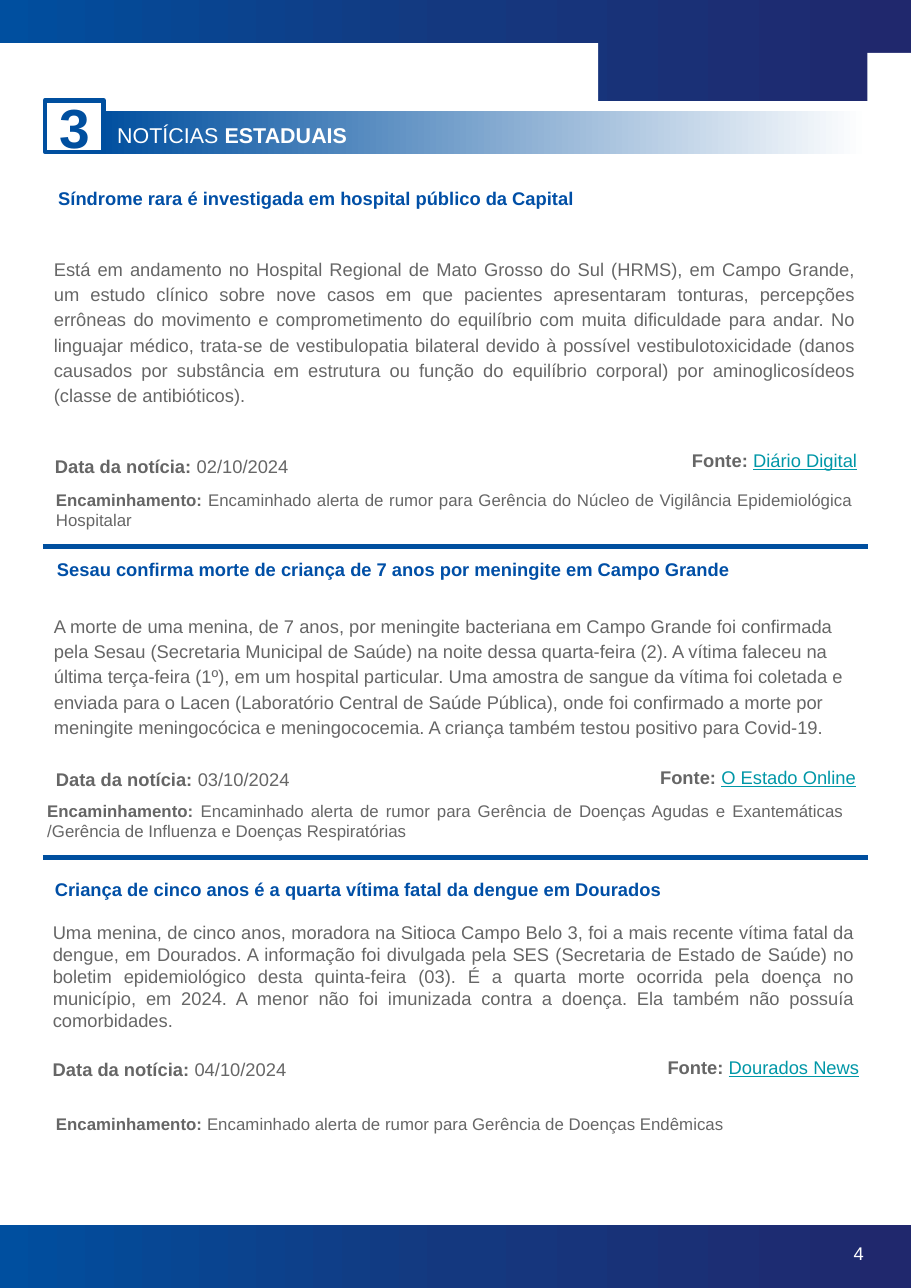
from copy import deepcopy

from lxml import etree
from pptx import Presentation
from pptx.dml.color import RGBColor
from pptx.enum.shapes import MSO_CONNECTOR, MSO_SHAPE
from pptx.enum.text import MSO_ANCHOR, MSO_AUTO_SIZE, PP_ALIGN
from pptx.oxml.ns import qn
from pptx.util import Pt

LEFT, CENTER, RIGHT, JUSTIFY = PP_ALIGN.LEFT, PP_ALIGN.CENTER, PP_ALIGN.RIGHT, PP_ALIGN.JUSTIFY
TOP, MIDDLE = MSO_ANCHOR.TOP, MSO_ANCHOR.MIDDLE
RECTANGLE, STRAIGHT = MSO_SHAPE.RECTANGLE, MSO_CONNECTOR.STRAIGHT

WIDTH, HEIGHT = 595.44, 841.68
INSET = 7.2
FONT = "Arial"
BLUE, HEADING, GREY, TEAL, WHITE = "004F9F", "004FA6", "666666", "0097A7", "FFFFFF"
BAND = [BLUE, "14387F", "20286D"]
BODY_WIDTH, FIELD_WIDTH, SOURCE_WIDTH = 538.6, 535, 255

SECTION_NUMBER, PAGE_NUMBER = "3", "4"
SECTION = [("NOTÍCIAS", False), (" ESTADUAIS", True)]
DATE_LABEL, SOURCE_LABEL, ACTION_LABEL = "Data da notícia: ", "Fonte: ", "Encaminhamento: "

# Places are (left, top); for a source, (right, top).
NEWS = [
    {
        "title": ("Síndrome rara é investigada em hospital público da Capital", (31, 115.2)),
        "body": (
            "Está em andamento no Hospital Regional de Mato Grosso do Sul (HRMS), em Campo Grande, "
            "um estudo clínico sobre nove casos em que pacientes apresentaram tonturas, percepções "
            "errôneas do movimento e comprometimento do equilíbrio com muita dificuldade para andar. "
            "No linguajar médico, trata-se de vestibulopatia bilateral devido à possível "
            "vestibulotoxicidade (danos causados por substância em estrutura ou função do equilíbrio "
            "corporal) por aminoglicosídeos (classe de antibióticos).", (28.1, 159.1)),
        "body_height": 113, "align": JUSTIFY, "spacing": 1.15,
        "date": ("02/10/2024", (28.8, 290.2)),
        "source": ("Diário Digital", (567.4, 286.6)),
        "action": ("Encaminhado alerta de rumor para Gerência do Núcleo de Vigilância "
                   "Epidemiológica Hospitalar", (29.5, 312.5)),
    },
    {
        "title": ("Sesau confirma morte de criança de 7 anos por meningite em Campo Grande",
                  (30.2, 357.8)),
        "body": (
            "A morte de uma menina, de 7 anos, por meningite bacteriana em Campo Grande foi "
            "confirmada pela Sesau (Secretaria Municipal de Saúde) na noite dessa quarta-feira (2). "
            "A vítima faleceu na última terça-feira (1º), em um hospital particular. Uma amostra de "
            "sangue da vítima foi coletada e enviada para o Lacen (Laboratório Central de Saúde "
            "Pública), onde foi confirmado a morte por meningite meningocócica e meningococemia. "
            "A criança também testou positivo para Covid-19.", (28.1, 392.4)),
        "body_height": 95.8, "align": LEFT, "spacing": 1.15,
        "date": ("03/10/2024", (29.5, 494.6)),
        "source": ("O Estado Online", (566.6, 493.2)),
        "action": ("Encaminhado alerta de rumor para Gerência de Doenças Agudas e Exantemáticas "
                   "/Gerência de Influenza e Doenças Respiratórias", (23.8, 516.2)),
    },
    {
        "title": ("Criança de cinco anos é a quarta vítima fatal da dengue em Dourados",
                  (28.8, 566.6)),
        "body": (
            "Uma menina, de cinco anos, moradora na Sitioca Campo Belo 3, foi a mais recente vítima "
            "fatal da dengue, em Dourados. A informação foi divulgada pela SES (Secretaria de Estado "
            "de Saúde) no boletim epidemiológico desta quinta-feira (03). É a quarta morte ocorrida "
            "pela doença no município, em 2024. A menor não foi imunizada contra a doença. Ela também "
            "não possuía comorbidades.", (27.4, 594.7)),
        "body_height": 87.1, "align": JUSTIFY, "spacing": 1,
        "date": ("04/10/2024", (27.4, 684)),
        "source": ("Dourados News", (568.8, 683.3)),
        "action": ("Encaminhado alerta de rumor para Gerência de Doenças Endêmicas", (29.5, 720.7)),
    },
]
DIVIDERS = [357.1, 560.2]


def color(value):
    return RGBColor.from_string(value)


def fill_gradient(shape, colors):
    """Fill from left to right with evenly spaced colours."""
    shape.fill.gradient()
    shape.fill.gradient_angle = 0
    stop_list = shape._element.spPr.find(qn("a:gradFill")).find(qn("a:gsLst"))
    while len(stop_list) < len(colors):
        stop_list.append(deepcopy(stop_list[-1]))
    for index, (stop, value) in enumerate(zip(shape.fill.gradient_stops, colors)):
        stop.position = index / (len(colors) - 1)
        stop.color.rgb = color(value)


def add_rectangle(slide, left, top, width, height, colors):
    shape = slide.shapes.add_shape(RECTANGLE, Pt(left), Pt(top), Pt(width), Pt(height))
    shape.shadow.inherit = False
    shape.line.fill.background()
    if len(colors) > 1:
        fill_gradient(shape, colors)
    else:
        shape.fill.solid()
        shape.fill.fore_color.rgb = color(colors[0])
    return shape


def write(shape, runs, size, align=LEFT, anchor=TOP, spacing=1, left_inset=INSET):
    """Write one paragraph from (text, colour, bold, underline) runs."""
    frame = shape.text_frame
    frame.auto_size = MSO_AUTO_SIZE.NONE
    frame.word_wrap = True
    frame.vertical_anchor = anchor
    frame.margin_left = Pt(left_inset)
    frame.margin_top = frame.margin_right = frame.margin_bottom = Pt(INSET)
    paragraph = frame.paragraphs[0]
    paragraph.alignment = align
    paragraph.line_spacing = spacing
    for text, value, bold, underline in runs:
        run = paragraph.add_run()
        run.text = text
        run.font.name = FONT
        run.font.size = Pt(size)
        run.font.bold = bold
        run.font.underline = underline
        run.font.color.rgb = color(value)


def add_text(slide, left, top, width, height, runs, size=12, **options):
    box = slide.shapes.add_textbox(Pt(left), Pt(top), Pt(width), Pt(height))
    write(box, runs, size, **options)


def add_divider(slide, top):
    line = slide.shapes.add_connector(STRAIGHT, Pt(28.1), Pt(top), Pt(567.2), Pt(top))
    line.line.color.rgb = color(BLUE)
    line.line.width = Pt(3)
    etree.SubElement(line._element.spPr, qn("a:effectLst"))


def add_page_frame(slide):
    add_rectangle(slide, 0, 800.6, WIDTH, HEIGHT - 800.6, BAND)
    add_rectangle(slide, 0, 15.1, WIDTH, 51.1, BAND)
    add_rectangle(slide, 0, 28.1, 391, 41.8, [WHITE])
    add_rectangle(slide, 0, 0, WIDTH, 28.1, BAND)
    add_rectangle(slide, 566.9, 34.6, WIDTH - 566.9, 35.3, [WHITE])
    add_text(slide, 535.7, 787, 36, 64, [(PAGE_NUMBER, WHITE, False, False)],
             align=RIGHT, anchor=MIDDLE)


def add_section_heading(slide):
    title = slide.shapes.title
    title.left, title.top, title.width, title.height = Pt(65.5), Pt(72.7), Pt(501.8), Pt(28.1)
    fill_gradient(title, [BLUE, WHITE])
    write(title, [(text, WHITE, bold, False) for text, bold in SECTION], 14, left_inset=11.1)
    number = add_rectangle(slide, 29.5, 65.5, 38.2, 33.8, [WHITE])
    number.line.color.rgb = color(BLUE)
    number.line.width = Pt(3)
    write(number, [(SECTION_NUMBER, BLUE, True, False)], 36, align=CENTER, anchor=MIDDLE)


def add_news(slide, news):
    text, place = news["title"]
    add_text(slide, *place, FIELD_WIDTH, 28.8, [(text, HEADING, True, False)], align=JUSTIFY)
    text, place = news["body"]
    add_text(slide, *place, BODY_WIDTH, news["body_height"], [(text, GREY, False, False)],
             align=news["align"], spacing=news["spacing"])
    text, place = news["date"]
    add_text(slide, *place, SOURCE_WIDTH, 28.8,
             [(DATE_LABEL, GREY, True, False), (text, GREY, False, False)], align=JUSTIFY)
    text, (right, top) = news["source"]
    add_text(slide, right - SOURCE_WIDTH, top, SOURCE_WIDTH, 28.8,
             [(SOURCE_LABEL, GREY, True, False), (text, TEAL, False, True)], align=RIGHT)
    text, place = news["action"]
    add_text(slide, *place, FIELD_WIDTH, 49,
             [(ACTION_LABEL, GREY, True, False), (text, GREY, False, False)], 11, align=JUSTIFY)


def main():
    presentation = Presentation()
    presentation.slide_width, presentation.slide_height = Pt(WIDTH), Pt(HEIGHT)
    slide = presentation.slides.add_slide(presentation.slide_layouts[5])
    add_page_frame(slide)
    add_section_heading(slide)
    for news in NEWS:
        add_news(slide, news)
    for top in DIVIDERS:
        add_divider(slide, top)
    presentation.save("out.pptx")


if __name__ == "__main__":
    main()
